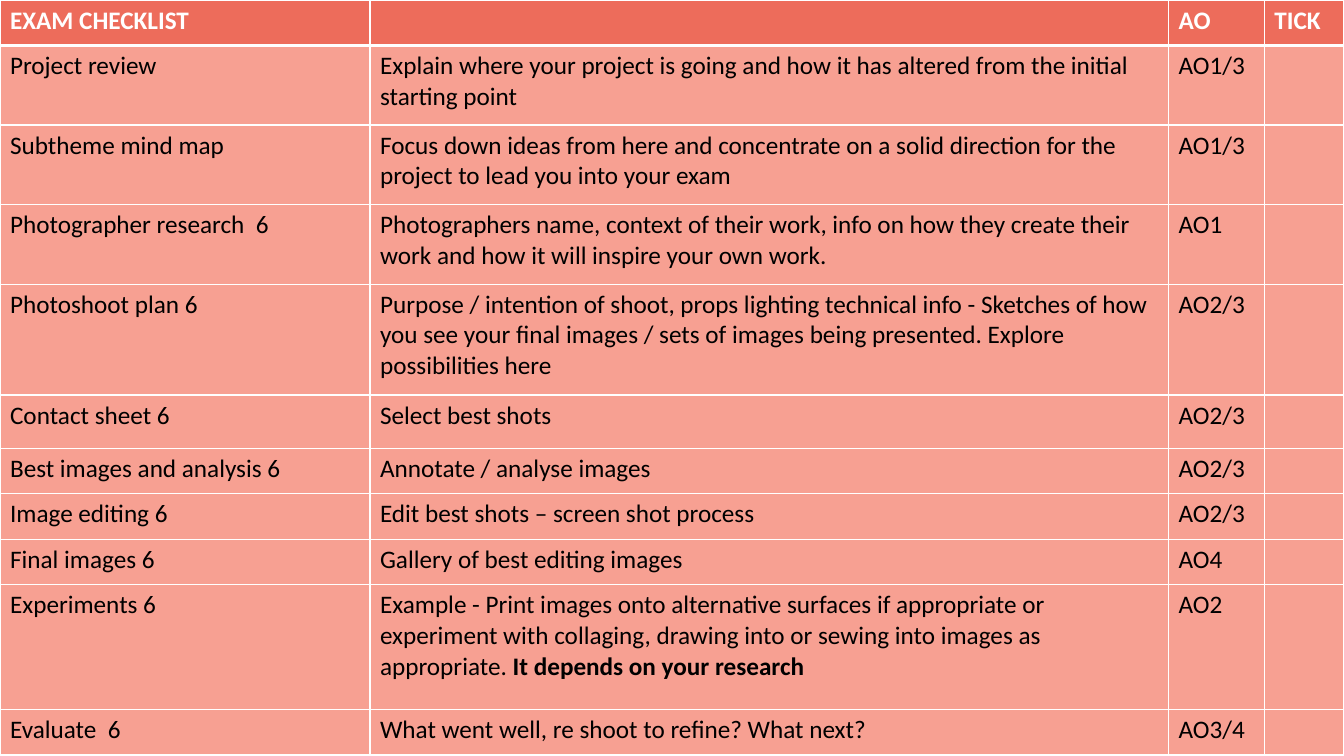
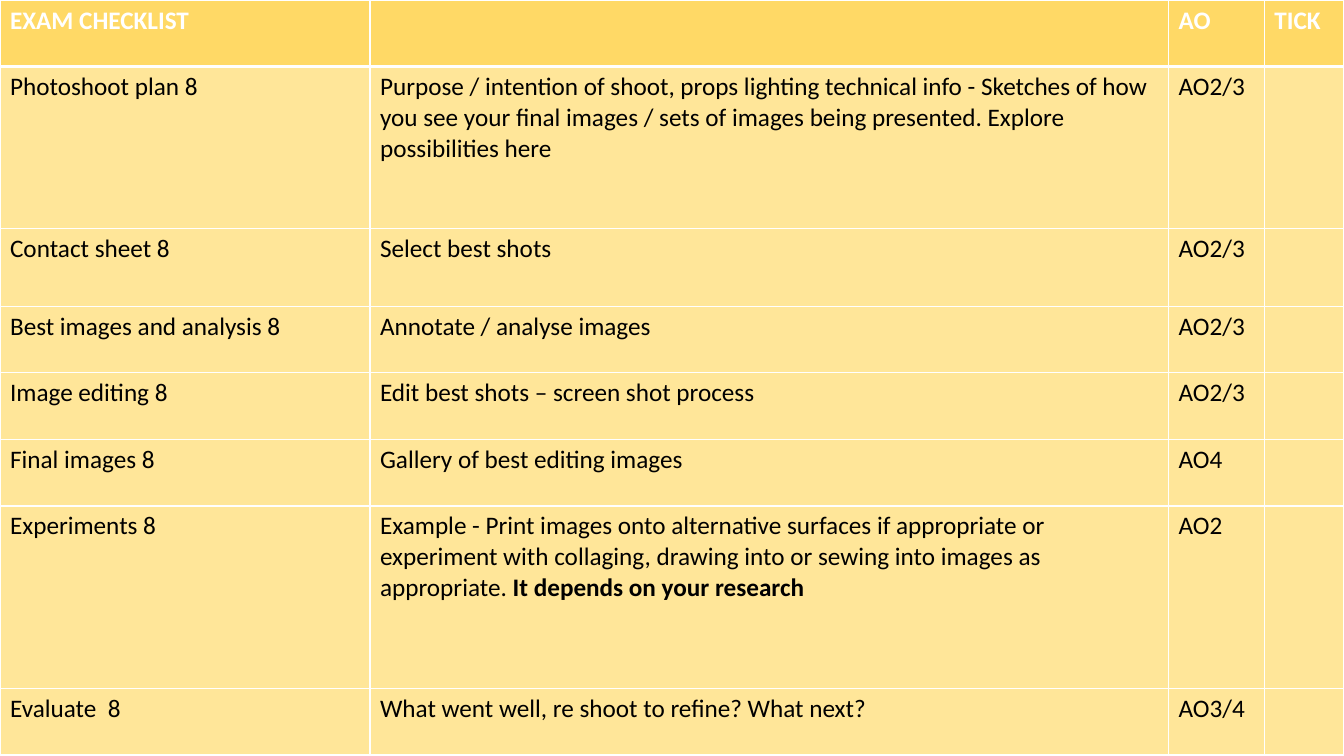
from dataclasses import dataclass

import lxml.etree
import pptx
import pptx.dml.color
import pptx.oxml.ns
import pptx.presentation
import pptx.table
import pptx.util

Inches = pptx.util.Inches
Pt = pptx.util.Pt

COLOURS = {
    "white": "FFFFFF",
    "black": "000000",
    "coral": "ED6C5B",
    "light coral": "F7A092",
    "gold": "FFD966",
    "light gold": "FFE699",
}
FONT = "Calibri"
TEXT_SIZE = 18
THIN, THICK = 1, 3
SLIDE_WIDTH, SLIDE_HEIGHT = 13.33, 7.5
COLUMN_WIDTHS = (3.67, 7.92, 0.95, 0.79)
HEADINGS = ("EXAM CHECKLIST", "", "AO", "TICK")


@dataclass(frozen=True)
class Task:
    title: str
    guidance: str
    objective: str
    emphasis: str = ""


@dataclass(frozen=True)
class Checklist:
    header_colour: str
    body_colour: str
    row_heights: tuple[float, ...]
    tasks: tuple[Task, ...]


OPENING_TASKS = (
    Task("Project review",
         "Explain where your project is going and how it has altered from the initial starting point",
         "AO1/3"),
    Task("Subtheme mind map",
         "Focus down ideas from here and concentrate on a solid direction for the project "
         "to lead you into your exam",
         "AO1/3"),
    Task("Photographer research  6",
         "Photographers name, context of their work, info on how they create their work "
         "and how it will inspire your own work.",
         "AO1"),
)


def shoot_tasks(shoot: int) -> tuple[Task, ...]:
    return (
        Task(f"Photoshoot plan {shoot}",
             "Purpose / intention of shoot, props lighting technical info - Sketches of how "
             "you see your final images / sets of images being presented. "
             "Explore possibilities here",
             "AO2/3"),
        Task(f"Contact sheet {shoot}", "Select best shots", "AO2/3"),
        Task(f"Best images and analysis {shoot}", "Annotate / analyse images", "AO2/3"),
        Task(f"Image editing {shoot}", "Edit best shots – screen shot process", "AO2/3"),
        Task(f"Final images {shoot}", "Gallery of best editing images", "AO4"),
        Task(f"Experiments {shoot}",
             "Example - Print images onto alternative surfaces if appropriate or experiment "
             "with collaging, drawing into or sewing into images as appropriate. ",
             "AO2", "It depends on your research"),
        Task(f"Evaluate  {shoot}", "What went well, re shoot to refine? What next?", "AO3/4"),
    )


CHECKLISTS = (
    Checklist("coral", "light coral",
              (0.45, 0.79, 0.79, 0.79, 1.1, 0.53, 0.45, 0.45, 0.45, 1.24, 0.45),
              OPENING_TASKS + shoot_tasks(6)),
    Checklist("gold", "light gold",
              (0.66, 1.61, 0.77, 0.66, 0.66, 0.66, 1.81, 0.66),
              shoot_tasks(8)),
)


def rgb(colour: str) -> pptx.dml.color.RGBColor:
    return pptx.dml.color.RGBColor.from_string(COLOURS[colour])


def set_borders(cell: pptx.table._Cell, top: int, bottom: int) -> None:
    qn = pptx.oxml.ns.qn
    properties = cell._tc.get_or_add_tcPr()
    widths = {"a:lnL": THIN, "a:lnR": THIN, "a:lnT": top, "a:lnB": bottom}
    for position, (side, width) in enumerate(widths.items()):
        border = lxml.etree.Element(qn(side), w=str(Pt(width)))
        fill = lxml.etree.SubElement(border, qn("a:solidFill"))
        lxml.etree.SubElement(fill, qn("a:srgbClr"), val=COLOURS["white"])
        properties.insert(position, border)


def fill_cell(cell: pptx.table._Cell, text: str, emphasis: str, fill: str, row: int) -> None:
    is_header = row == 0
    cell.fill.solid()
    cell.fill.fore_color.rgb = rgb(fill)
    set_borders(cell, THICK if row == 1 else THIN, THICK if is_header else THIN)
    paragraph = cell.text_frame.paragraphs[0]
    paragraph.text = text
    paragraph.font.size = Pt(TEXT_SIZE)
    if emphasis:
        paragraph.add_run().text = emphasis
    for index, run in enumerate(paragraph.runs):
        run.font.name = FONT
        run.font.size = Pt(TEXT_SIZE)
        run.font.bold = is_header or index > 0
        run.font.color.rgb = rgb("white" if is_header else "black")


def add_checklist(deck: pptx.presentation.Presentation, checklist: Checklist) -> None:
    slide = deck.slides.add_slide(deck.slide_layouts[6])
    table = slide.shapes.add_table(
        len(checklist.row_heights), len(COLUMN_WIDTHS),
        Inches(0), Inches(0), Inches(SLIDE_WIDTH), Inches(SLIDE_HEIGHT),
    ).table
    table.horz_banding = False
    for column, width in zip(table.columns, COLUMN_WIDTHS):
        column.width = Inches(width)
    for table_row, height in zip(table.rows, checklist.row_heights):
        table_row.height = Inches(height)

    for column, heading in enumerate(HEADINGS):
        fill_cell(table.cell(0, column), heading, "", checklist.header_colour, 0)
    for row, task in enumerate(checklist.tasks, start=1):
        entries = ((task.title, ""), (task.guidance, task.emphasis), (task.objective, ""), ("", ""))
        for column, (text, emphasis) in enumerate(entries):
            fill_cell(table.cell(row, column), text, emphasis, checklist.body_colour, row)


def main() -> None:
    deck = pptx.Presentation()
    deck.slide_width = Inches(SLIDE_WIDTH)
    deck.slide_height = Inches(SLIDE_HEIGHT)
    for checklist in CHECKLISTS:
        add_checklist(deck, checklist)
    deck.save("out.pptx")


if __name__ == "__main__":
    main()
